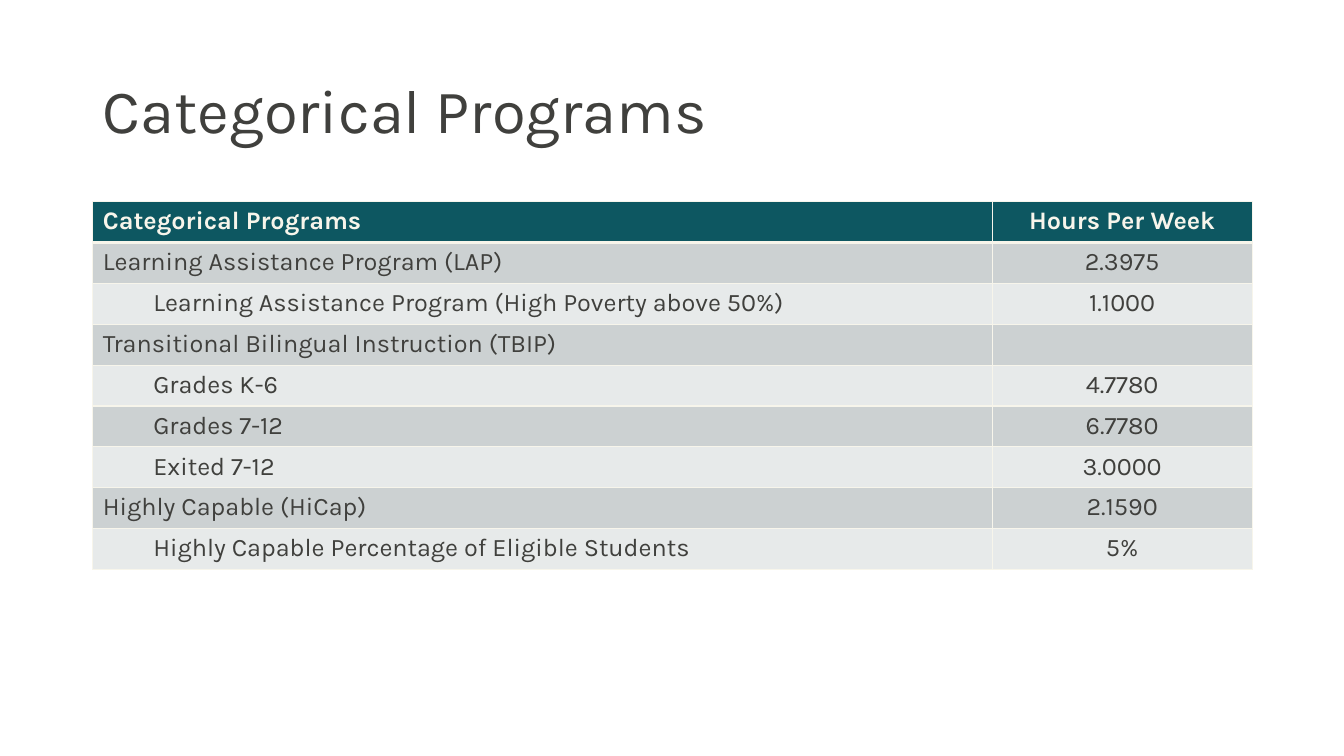
from lxml.etree import SubElement
from pptx import Presentation
from pptx.dml.color import RGBColor
from pptx.enum.text import MSO_ANCHOR, MSO_AUTO_SIZE, PP_ALIGN
from pptx.oxml.ns import qn
from pptx.util import Inches, Pt

FONT = "Karla"
COLORS = {
    "text": "40403D",
    "cream": "F7F5EB",
    "header": "0D5761",
    "dark_band": "CCD1D2",
    "light_band": "E7EAEA",
}
COLUMN_WIDTHS = (8.92, 2.58)

# Program name, hours per week, indent level
PROGRAMS = [
    ("Categorical Programs", "Hours Per Week", 0),
    ("Learning Assistance Program (LAP)", "2.3975", 0),
    ("Learning Assistance Program (High Poverty above 50%)", "1.1000", 1),
    ("Transitional Bilingual Instruction (TBIP)", "", 0),
    ("Grades K-6", "4.7780", 1),
    ("Grades 7-12", "6.7780", 1),
    ("Exited 7-12", "3.0000", 1),
    ("Highly Capable (HiCap)", "2.1590", 0),
    ("Highly Capable Percentage of Eligible Students", "5%", 1),
]


def format_paragraph(paragraph, size, color, bold=False, alignment=PP_ALIGN.LEFT):
    paragraph.alignment = alignment
    for run in paragraph.runs:
        run.font.name = FONT
        run.font.size = Pt(size)
        run.font.bold = bold
        run.font.color.rgb = RGBColor.from_string(COLORS[color])


def set_borders(cell, top, bottom):
    properties = cell._tc.get_or_add_tcPr()
    for side, width in (("L", 1), ("R", 1), ("T", top), ("B", bottom)):
        line = SubElement(properties, qn(f"a:ln{side}"), w=str(Pt(width)))
        fill = SubElement(line, qn("a:solidFill"))
        SubElement(fill, qn("a:srgbClr"), val=COLORS["cream"])


def add_title(slide, text):
    title = slide.shapes.title
    title.left, title.top = Inches(0.92), Inches(0.4)
    title.width, title.height = Inches(11.5), Inches(1.45)
    text_frame = title.text_frame
    text_frame.text = text
    text_frame.word_wrap = True
    text_frame.auto_size = MSO_AUTO_SIZE.NONE
    text_frame.vertical_anchor = MSO_ANCHOR.MIDDLE
    paragraph = text_frame.paragraphs[0]
    paragraph.line_spacing = 0.9
    format_paragraph(paragraph, 44, "text")


def fill_cell(cell, text, row_index, level, alignment):
    is_header = row_index == 0
    # The rule under the header is heavier than the other borders
    set_borders(cell, top=3 if row_index == 1 else 1, bottom=3 if is_header else 1)
    band = "header" if is_header else "dark_band" if row_index % 2 else "light_band"
    cell.fill.solid()
    cell.fill.fore_color.rgb = RGBColor.from_string(COLORS[band])

    cell.text_frame.text = text
    paragraph = cell.text_frame.paragraphs[0]
    if level:
        paragraph.level = level
        properties = paragraph._p.get_or_add_pPr()
        properties.set("marL", str(Inches(0.5 * level)))
        properties.set("indent", "0")
    format_paragraph(paragraph, 18, "cream" if is_header else "text", is_header, alignment)


def add_program_table(slide):
    frame = slide.shapes.add_table(
        len(PROGRAMS), len(COLUMN_WIDTHS),
        Inches(0.92), Inches(2), Inches(11.5), Inches(3.65),
    )
    table = frame.table
    for column, width in zip(table.columns, COLUMN_WIDTHS):
        column.width = Inches(width)
    for row_index, (program, hours, level) in enumerate(PROGRAMS):
        fill_cell(table.cell(row_index, 0), program, row_index, level, PP_ALIGN.LEFT)
        fill_cell(table.cell(row_index, 1), hours, row_index, 0, PP_ALIGN.CENTER)


def main():
    presentation = Presentation()
    presentation.slide_width = Inches(13.33)
    presentation.slide_height = Inches(7.5)

    # Title Only layout
    slide = presentation.slides.add_slide(presentation.slide_layouts[5])
    add_title(slide, "Categorical Programs")
    add_program_table(slide)
    presentation.save("out.pptx")


if __name__ == "__main__":
    main()
